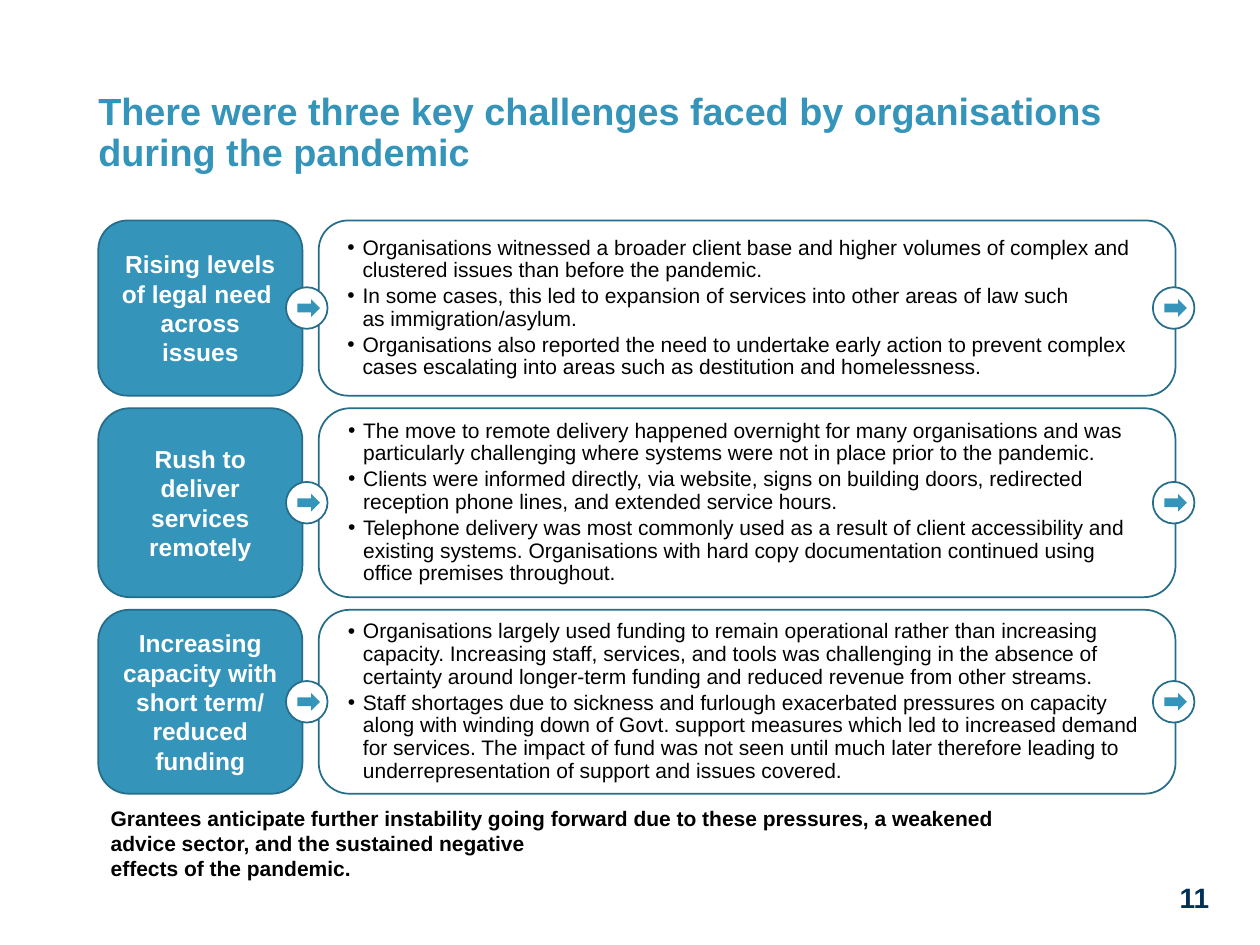
import pptx
import pptx.dml.color
import pptx.enum.shapes
import pptx.enum.text
import pptx.oxml.ns
import pptx.util
from lxml import etree

Inches = pptx.util.Inches
Pt = pptx.util.Pt
Kind = pptx.enum.shapes.MSO_SHAPE
Align = pptx.enum.text.PP_ALIGN
Anchor = pptx.enum.text.MSO_ANCHOR
Fit = pptx.enum.text.MSO_AUTO_SIZE

BLUE, EDGE, NAVY, WHITE, BLACK = "3494BA", "266D8A", "003057", "FFFFFF", "000000"

LEFT, RIGHT = 0.78, 9.33
LABEL_W, BODY_X = 1.62, 2.53
TOP, GAP = 1.75, 0.1
DOT = 0.33

# Each row: height, label, bullet points
ROWS = [
    (1.39, "Rising levels of legal need \nacross issues", [
        "Organisations witnessed a broader client base and higher volumes of complex and "
        "clustered issues than before the pandemic.",
        "In some cases, this led to expansion of services into other areas of law such \n"
        "as immigration/asylum.",
        "Organisations also reported the need to undertake early action to prevent complex "
        "cases escalating into areas such as destitution and homelessness.",
    ]),
    (1.5, "Rush to deliver services remotely", [
        "The move to remote delivery happened overnight for many organisations and was "
        "particularly challenging where systems were not in place prior to the pandemic.",
        "Clients were informed directly, via website, signs on building doors, redirected "
        "reception phone lines, and extended service hours.",
        "Telephone delivery was most commonly used as a result of client accessibility and "
        "existing systems. Organisations with hard copy documentation continued using "
        "office premises throughout.",
    ]),
    (1.46, "Increasing capacity with short term/ reduced funding", [
        "Organisations largely used funding to remain operational rather than increasing "
        "capacity. Increasing staff, services, and tools was challenging in the absence of "
        "certainty around longer-term funding and reduced revenue from other streams.",
        "Staff shortages due to sickness and furlough exacerbated pressures on capacity "
        "along with winding down of Govt. support measures which led to increased demand "
        "for services. The impact of fund was not seen until much later therefore leading to "
        "underrepresentation of support and issues covered.",
    ]),
]


def color(code):
    return pptx.dml.color.RGBColor.from_string(code)


class Deck:
    """Holds the style and the current slide."""

    font = "Arial"

    def __init__(self):
        self.show = pptx.Presentation()
        self.show.slide_width, self.show.slide_height = Inches(10), Inches(7.5)
        self.slide = self.show.slides.add_slide(self.show.slide_layouts[5])

    def shape(self, kind, x, y, w, h, fill=None, line=None):
        item = self.slide.shapes.add_shape(kind, Inches(x), Inches(y), Inches(w), Inches(h))
        item.shadow.inherit = False
        if fill:
            item.fill.solid()
            item.fill.fore_color.rgb = color(fill)
        else:
            item.fill.background()
        if line:
            item.line.color.rgb = color(line)
            item.line.width = Pt(1)
        else:
            item.line.fill.background()
        return item

    def words(self, item, lines, size, ink, bold=False, align=Align.LEFT, bullet=False,
              pad=None, frame=None, para=None):
        box = item.text_frame
        box.word_wrap = True
        if pad:
            sides = ("left", "top", "right", "bottom")
            for side, gap in zip(sides, pad):
                setattr(box, "margin_" + side, Inches(gap))
        for name, value in (frame or {}).items():
            setattr(box, name, value)
        for i, line in enumerate(lines):
            part = box.add_paragraph() if i else box.paragraphs[0]
            part.text = line
            if bullet:
                self.bullet(part)
            look = {"alignment": align, **(para or {})}
            for name, value in look.items():
                setattr(part, name, value)
            for run in part.runs:
                style = {"name": self.font, "size": Pt(size), "bold": bold}
                for name, value in style.items():
                    setattr(run.font, name, value)
                run.font.color.rgb = color(ink)

    def bullet(self, part):
        props = part._p.get_or_add_pPr()
        props.set("marL", str(Inches(0.12)))
        props.set("indent", str(-Inches(0.12)))
        tag = pptx.oxml.ns.qn
        etree.SubElement(props, tag("a:buFont"), typeface=self.font)
        etree.SubElement(props, tag("a:buChar"), char="•")

    def title(self, text, x, y, w, h):
        item = self.slide.shapes.title
        place = {"left": x, "top": y, "width": w, "height": h}
        for name, value in place.items():
            setattr(item, name, Inches(value))
        self.words(item, [text], 21.6, BLUE, True, pad=(0, 0, 0, 0),
                   frame={"vertical_anchor": Anchor.TOP, "auto_size": Fit.NONE},
                   para={"line_spacing": 0.9})

    def text(self, text, x, y, w, h, size, ink, **rest):
        item = self.slide.shapes.add_textbox(Inches(x), Inches(y), Inches(w), Inches(h))
        self.words(item, [text], size, ink, True, **rest)

    def label(self, text, x, y, w, h):
        item = self.shape(Kind.ROUNDED_RECTANGLE, x, y, w, h, BLUE, EDGE)
        self.words(item, [text], 14, WHITE, True, Align.CENTER,
                   frame={"vertical_anchor": Anchor.MIDDLE})

    def points(self, lines, x, y, w, h):
        item = self.shape(Kind.ROUNDED_RECTANGLE, x, y, w, h, line=EDGE)
        self.words(item, lines, 12, BLACK, bullet=True, pad=(0.16, 0.05, 0.16, 0.05),
                   frame={"vertical_anchor": Anchor.MIDDLE},
                   para={"line_spacing": 0.9, "space_after": Pt(1.8)})

    def badge(self, x, mid):
        y = mid - DOT / 2
        self.shape(Kind.OVAL, x, y, DOT, DOT, WHITE, EDGE)
        self.shape(Kind.RIGHT_ARROW, x + 0.09, mid - 0.07, 0.18, 0.14, BLUE)


def main():
    deck = Deck()

    # Title
    deck.title("There were three key challenges faced by organisations during the pandemic",
               LEFT, 0.74, 8.44, 0.38)

    # Challenge rows
    y = TOP
    for high, name, lines in ROWS:
        deck.points(lines, BODY_X, y, RIGHT - BODY_X, high)
        deck.label(name, LEFT, y, LABEL_W, high)
        for x in (2.27, 9.15):
            deck.badge(x, y + high / 2)
        y += high + GAP

    # Closing remark and page number
    deck.text("Grantees anticipate further instability going forward due to these pressures, "
              "a weakened \nadvice sector, and the sustained negative \n"
              "effects of the pandemic.",
              LEFT, 6.34, RIGHT - LEFT, 0.71, 12, BLACK,
              frame={"auto_size": Fit.SHAPE_TO_FIT_TEXT})
    deck.text("11", RIGHT, 6.99, 0.3, 0.28, 16, NAVY, align=Align.CENTER, pad=(0, 0, 0, 0))

    deck.show.save("out.pptx")


if __name__ == "__main__":
    main()
